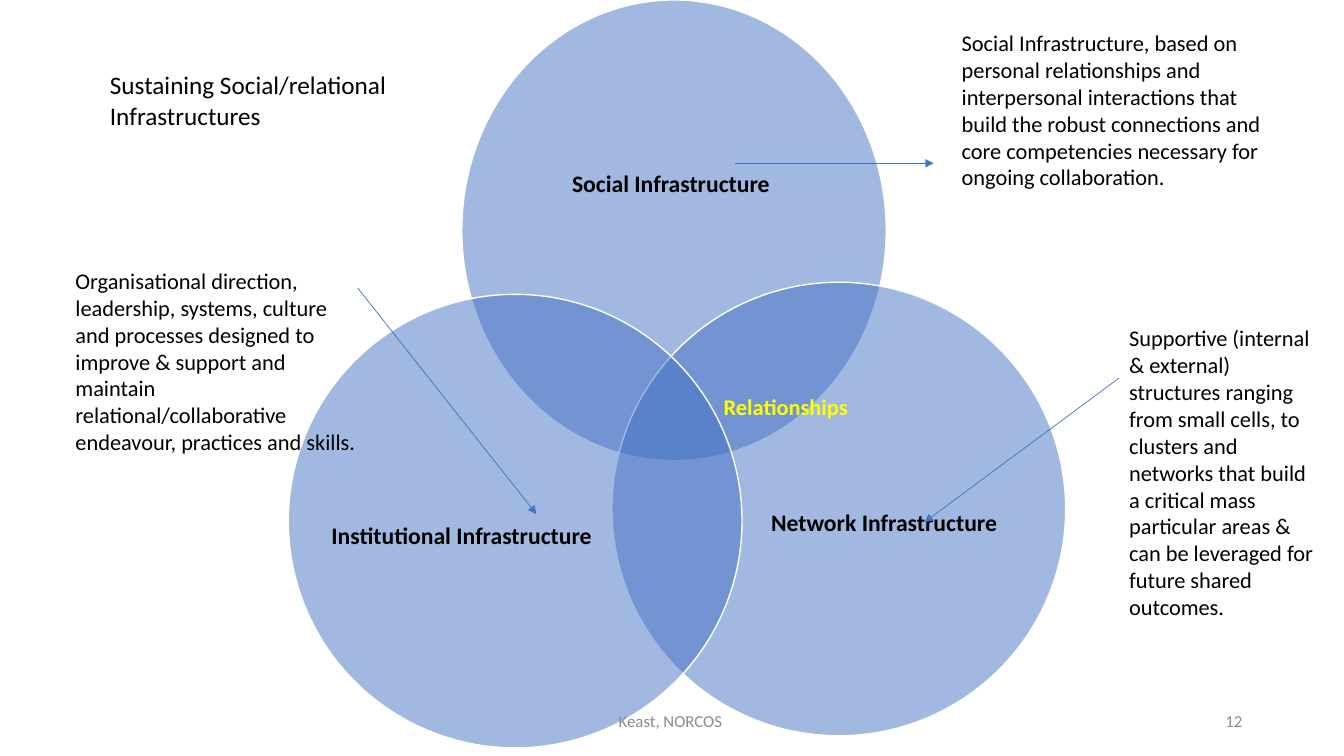
import pptx
import pptx.dml.color
import pptx.enum.shapes
import pptx.enum.text
import pptx.oxml
import pptx.oxml.ns
import pptx.util
from pptx.dml.color import RGBColor
from pptx.util import Inches

BLUE = RGBColor(0x44, 0x72, 0xC4)
WHITE = RGBColor(0xFF, 0xFF, 0xFF)
BLACK = RGBColor(0, 0, 0)
YELLOW = RGBColor(0xFF, 0xFF, 0)
GRAY = RGBColor(0x8C, 0x8C, 0x8C)

ALIGN = pptx.enum.text.PP_ALIGN
ANCHOR = pptx.enum.text.MSO_ANCHOR

# circle box, label text, label box relative to the circle's corner
CIRCLES = [
    ((4.58, 0, 4.21, 4.57), "Social Infrastructure", (0.53, 0.8, 3.09, 2.06)),
    ((6.07, 2.8, 4.5, 4.5), "Network Infrastructure", (1.35, 1.16, 2.7, 2.48)),
    ((2.86, 2.92, 4.5, 4.5), "Institutional Infrastructure", (0.37, 1.17, 2.7, 2.48)),
]

# note box, text, arrow start, arrow end
NOTES = [
    ((9.44, 0.24, 3.34, 1.72),
     "Social Infrastructure, based on personal relationships and interpersonal "
     "interactions that build the robust connections and core competencies "
     "necessary for ongoing collaboration.",
     (7.29, 1.62), (9.26, 1.62)),
    ((0.65, 2.6, 3.02, 1.99),
     "Organisational direction, leadership, systems, culture and processes "
     "designed to improve & support and maintain relational/collaborative "
     "endeavour, practices and skills.",
     (3.55, 2.86), (5.32, 5.1)),
    ((11.1, 3.17, 2.09, 3.06),
     "Supportive (internal & external) structures ranging from small cells, to "
     "clusters and networks that build a critical mass particular areas & can "
     "be leveraged for future shared outcomes.",
     (11.1, 3.75), (9.17, 5.18)),
]


def write(sp, text, size, color=BLACK, bold=False, align=ALIGN.LEFT,
          anchor=ANCHOR.TOP):
    tf = sp.text_frame
    tf.word_wrap = True
    tf.auto_size = pptx.enum.text.MSO_AUTO_SIZE.NONE
    tf.vertical_anchor = anchor
    p = tf.paragraphs[0]
    p.text = text
    p.alignment = align
    p.font.name = "Calibri"
    p.font.size = pptx.util.Pt(size)
    p.font.bold = bold
    p.font.color.rgb = color
    return tf


def add_text(s, box, text, size, **style):
    return write(s.shapes.add_textbox(*map(Inches, box)), text, size, **style)


def add_title(s, box):
    sp = s.shapes.title
    sp.left, sp.top, sp.width, sp.height = map(Inches, box)
    write(sp, "Sustaining Social/relational Infrastructures", 18)


def add_circle(s, box):
    sp = s.shapes.add_shape(pptx.enum.shapes.MSO_SHAPE.OVAL, *map(Inches, box))
    sp.shadow.inherit = False
    sp.fill.solid()
    sp.fill.fore_color.rgb = BLUE
    clr = sp.fill._xPr.find(".//" + pptx.oxml.ns.qn("a:srgbClr"))
    clr.append(pptx.oxml.parse_xml(
        f'<a:alpha {pptx.oxml.ns.nsdecls("a")} val="50000"/>'))
    sp.line.color.rgb = WHITE
    sp.line.width = pptx.util.Pt(1)


def add_venn_part(s, box, label, offset):
    """Circle with its label, the label box offset from the circle's corner."""
    add_circle(s, box)
    dx, dy, w, h = offset
    tf = add_text(s, (box[0] + dx, box[1] + dy, w, h), label, 16.9, bold=True,
                  align=ALIGN.CENTER, anchor=ANCHOR.MIDDLE)
    tf.margin_left = tf.margin_right = tf.margin_top = tf.margin_bottom = 0
    tf.paragraphs[0].line_spacing = 0.9


def add_arrow(s, start, end):
    c = s.shapes.add_connector(pptx.enum.shapes.MSO_CONNECTOR.STRAIGHT,
                               *map(Inches, start + end))
    c.line.color.rgb = BLUE
    c.line.width = pptx.util.Pt(0.5)
    ns = pptx.oxml.ns.nsdecls("a")
    c.line._get_or_add_ln().append(
        pptx.oxml.parse_xml(f'<a:tailEnd {ns} type="triangle"/>'))
    c._element.spPr.append(pptx.oxml.parse_xml(f"<a:effectLst {ns}/>"))


def add_notes_with_arrows(s):
    for box, text, start, end in NOTES:
        add_text(s, box, text, 16)
        add_arrow(s, start, end)


def add_footer(s, top, height):
    add_text(s, (4.4, top, 4.5, height), "Keast, NORCOS", 12, color=GRAY,
             align=ALIGN.CENTER, anchor=ANCHOR.MIDDLE)
    add_text(s, (9.42, top, 3, height), "12", 12, color=GRAY,
             align=ALIGN.RIGHT, anchor=ANCHOR.MIDDLE)


def main():
    prs = pptx.Presentation()
    prs.slide_width, prs.slide_height = Inches(13.33), Inches(7.5)
    s = prs.slides.add_slide(prs.slide_layouts.get_by_name("Title Only"))
    add_title(s, (0.99, 0.64, 3.34, 0.71))
    for box, label, offset in CIRCLES:
        add_venn_part(s, box, label, offset)
    add_notes_with_arrows(s)
    add_text(s, (7.08, 3.85, 1.94, 0.4), "Relationships", 16, color=YELLOW, bold=True)
    add_footer(s, 6.95, 0.4)
    prs.save("out.pptx")


if __name__ == "__main__":
    main()
